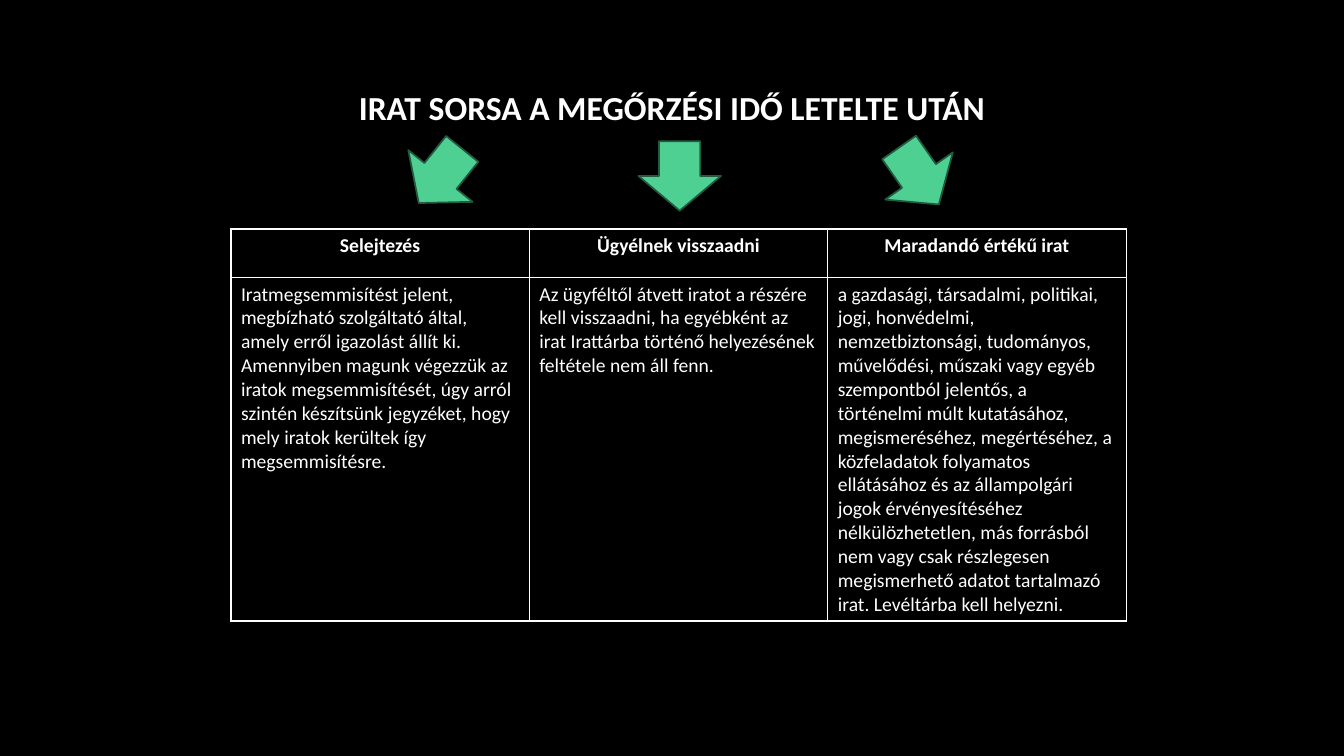
from dataclasses import dataclass

from lxml import etree
from pptx import Presentation
from pptx import util as u
from pptx.dml.color import RGBColor
from pptx.enum import shapes, text
from pptx.oxml import ns


@dataclass(frozen=True)
class Theme:
    """Colours, font and type sizes of the slide."""
    background: str = "000000"
    ink: str = "FFFFFF"
    arrow: str = "4FD093"
    arrow_edge: str = "235B40"
    font: str = "Calibri"
    title_size: int = 24
    cell_size: int = 14


THEME = Theme()
TITLE = "IRAT SORSA A MEGŐRZÉSI IDŐ LETELTE UTÁN"
ARROW_ANGLES = (38.8, 0, 325.1)
OUTCOMES = (
    ("Selejtezés",
     "Iratmegsemmisítést jelent, megbízható szolgáltató által, amely erről igazolást "
     "állít ki. Amennyiben magunk végezzük az iratok megsemmisítését, úgy arról szintén "
     "készítsünk jegyzéket, hogy mely iratok kerültek így megsemmisítésre."),
    ("Ügyélnek visszaadni",
     "Az ügyféltől átvett iratot a részére kell visszaadni, ha egyébként az irat "
     "Irattárba történő helyezésének feltétele nem áll fenn."),
    ("Maradandó értékű irat",
     "a gazdasági, társadalmi, politikai, jogi, honvédelmi, nemzetbiztonsági, "
     "tudományos, művelődési, műszaki vagy egyéb szempontból jelentős, a történelmi "
     "múlt kutatásához, megismeréséhez, megértéséhez, a közfeladatok folyamatos "
     "ellátásához és az állampolgári jogok érvényesítéséhez nélkülözhetetlen, más "
     "forrásból nem vagy csak részlegesen megismerhető adatot tartalmazó irat. "
     "Levéltárba kell helyezni."),
)


def write(frame, wording, size, bold, align):
    """Put one formatted paragraph into a text frame."""
    paragraph = frame.paragraphs[0]
    paragraph.text = wording
    paragraph.alignment = align
    style = {"name": THEME.font, "size": u.Pt(size), "bold": bold}
    for key, value in style.items():
        setattr(paragraph.font, key, value)
    paragraph.font.color.rgb = RGBColor.from_string(THEME.ink)
    return paragraph


def add_title(slide):
    """Add the centred heading."""
    heading = slide.shapes.add_textbox(u.Cm(3.18), u.Cm(1.85), u.Cm(27.51), u.Cm(1.5))
    heading.text_frame.word_wrap = True
    line = write(heading.text_frame, TITLE, THEME.title_size, True, text.PP_ALIGN.CENTER)
    line.line_spacing = 1.2


def add_arrow(slide, left, angle):
    """Add one arrow pointing from the heading to a column."""
    arrow = slide.shapes.add_shape(shapes.MSO_SHAPE.DOWN_ARROW,
                                   left, u.Cm(3.56), u.Cm(2.08), u.Cm(1.75))
    arrow.rotation = angle
    arrow.shadow.inherit = False
    arrow.fill.solid()
    arrow.fill.fore_color.rgb = RGBColor.from_string(THEME.arrow)
    arrow.line.color.rgb = RGBColor.from_string(THEME.arrow_edge)
    arrow.line.width = u.Pt(1.25)


def frame_cell(cell):
    """Clear the cell fill and draw a thin line on all four sides."""
    cell.fill.background()
    properties = cell._tc.get_or_add_tcPr()
    for position, side in enumerate(("lnL", "lnR", "lnT", "lnB")):
        edge = etree.Element(ns.qn(f"a:{side}"), w=str(u.Pt(1)))
        fill = etree.SubElement(edge, ns.qn("a:solidFill"))
        etree.SubElement(fill, ns.qn("a:srgbClr"), val=THEME.ink)
        properties.insert(position, edge)


def add_outcomes(slide):
    """Add the table with one column for each outcome."""
    outcomes = slide.shapes.add_table(2, len(OUTCOMES), u.Cm(5.82), u.Cm(5.77),
                                      u.Cm(22.56), u.Cm(9.88)).table
    for row, height in zip(outcomes.rows, (1.22, 8.66)):
        row.height = u.Cm(height)
    for column, wordings in enumerate(OUTCOMES):
        outcomes.columns[column].width = u.Cm(7.52)
        for row, wording in enumerate(wordings):
            cell = outcomes.cell(row, column)
            is_header = row == 0
            align = text.PP_ALIGN.CENTER if is_header else text.PP_ALIGN.LEFT
            write(cell.text_frame, wording, THEME.cell_size, is_header, align)
            frame_cell(cell)


def main():
    """Build and save the slide."""
    deck = Presentation()
    deck.slide_width, deck.slide_height = u.Cm(33.87), u.Cm(19.05)
    slide = deck.slides.add_slide(deck.slide_layouts[6])
    slide.background.fill.solid()
    slide.background.fill.fore_color.rgb = RGBColor.from_string(THEME.background)
    add_title(slide)
    for index, angle in enumerate(ARROW_ANGLES):
        add_arrow(slide, u.Cm(10.06 + 6.03 * index), angle)
    add_outcomes(slide)
    deck.save("out.pptx")


if __name__ == "__main__":
    main()
